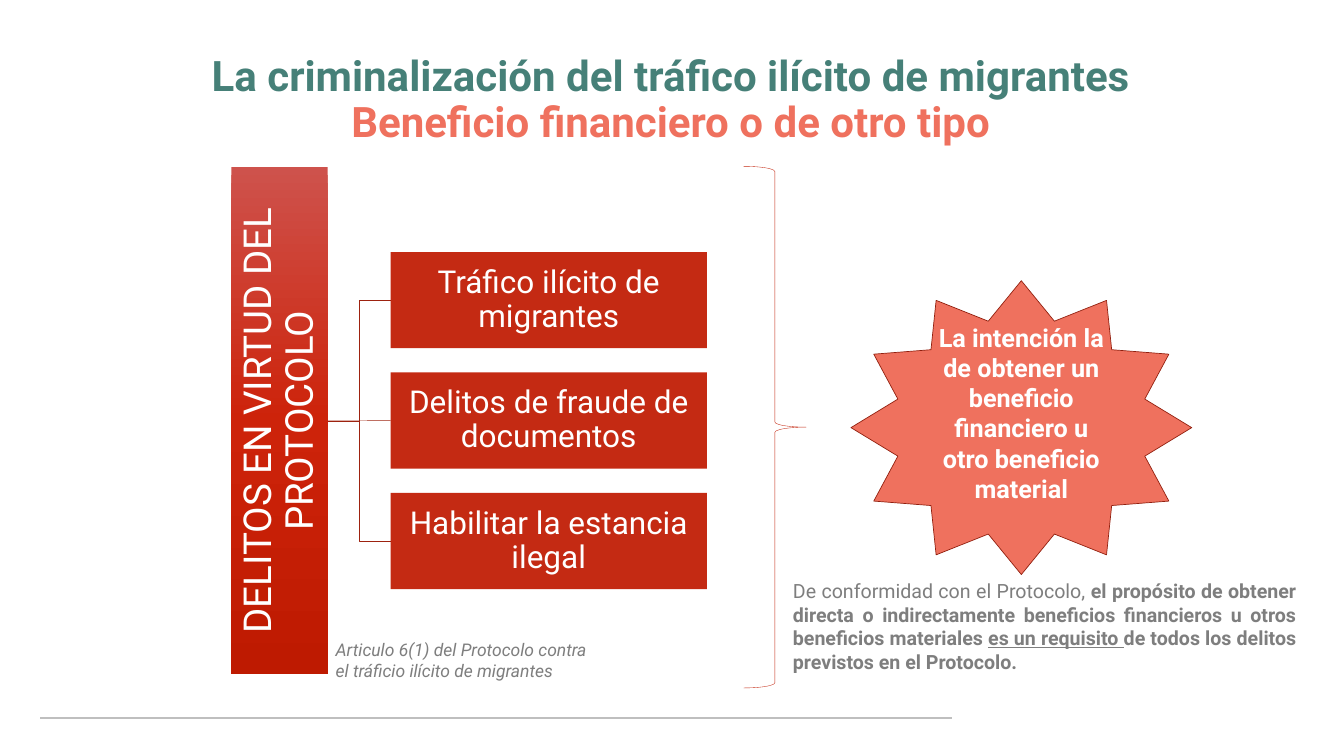
from copy import deepcopy

from lxml import etree
from pptx import Presentation
from pptx.dml.color import RGBColor
from pptx.enum.shapes import MSO_CONNECTOR as Link, MSO_SHAPE as Preset
from pptx.enum.text import MSO_ANCHOR as Anchor, PP_ALIGN as Align
from pptx.oxml.ns import qn
from pptx.util import Inches, Pt

FONT = "Roboto"
WHITE, GREEN, CORAL, GREY = "FFFFFF", "468078", "EF715E", "7E7E7E"
RED, DARK_RED = "C42A13", "9D220F"
OFFENCES = [
    "Tráfico ilícito de migrantes",
    "Delitos de fraude de documentos",
    "Habilitar la estancia ilegal",
]
BOX_LEFT, BOX_TOP, BOX_WIDTH, BOX_HEIGHT, BOX_PITCH = 7.75, 5, 6.27, 1.91, 2.39


def color(hex_string):
    return RGBColor.from_string(hex_string)


def set_frame(shape, inset_x=0.1, inset_y=0.05, anchor=Anchor.MIDDLE):
    frame = shape.text_frame
    frame.word_wrap = True
    frame.vertical_anchor = anchor
    frame.margin_left = frame.margin_right = Inches(inset_x)
    frame.margin_top = frame.margin_bottom = Inches(inset_y)
    return frame


def write(frame, spans, size, align, spacing=1.0):
    """Fill the first paragraph with (text, colour, styles) spans."""
    para = frame.paragraphs[0]
    para.alignment = align
    para.line_spacing = spacing
    for text, hex_string, styles in spans:
        if text == "\v":
            para.add_line_break()
            continue
        span = para.add_run()
        span.text = text
        font = span.font
        font.name, font.size = FONT, Pt(size)
        font.color.rgb = color(hex_string)
        font.bold, font.italic, font.underline = (s in styles for s in "biu")


def add_shape(page, preset, place, fill=None, line=None, line_width=0.5):
    shape = page.shapes.add_shape(preset, *map(Inches, place))
    shape.shadow.inherit = False
    if fill:
        shape.fill.solid()
        shape.fill.fore_color.rgb = color(fill)
    else:
        shape.fill.background()
    if line:
        shape.line.color.rgb = color(line)
        shape.line.width = Pt(line_width)
    else:
        shape.line.fill.background()
    return shape


def add_text(page, place, spans, size, align):
    box = page.shapes.add_textbox(*map(Inches, place))
    write(set_frame(box, anchor=Anchor.TOP), spans, size, align)


def add_line(page, kind, start, end, hex_string, width):
    line = page.shapes.add_connector(kind, *map(Inches, start + end))
    line.line.color.rgb = color(hex_string)
    line.line.width = Pt(width)
    etree.SubElement(line._element.spPr, qn("a:effectLst"))
    return line


def set_gradient(shape, hex_strings):
    """Shade from top to bottom through evenly spaced colours."""
    shape.fill.gradient()
    shape.fill.gradient_angle = 270
    stop_list = shape._element.spPr.find(".//" + qn("a:gsLst"))
    for _ in hex_strings[2:]:
        stop_list.append(deepcopy(stop_list[-1]))
    for index, stop in enumerate(shape.fill.gradient_stops):
        stop.position = index / (len(hex_strings) - 1)
        stop.color.rgb = color(hex_strings[index])


def add_title(page):
    box = page.shapes.add_textbox(*map(Inches, (0.8, 0.55, 25.01, 2.9)))
    spans = [
        ("La criminalización del tráfico ilícito de migrantes", GREEN, "b"),
        ("\v", GREEN, ""),
        ("Beneficio financiero o de otro tipo", CORAL, "b"),
    ]
    write(set_frame(box, 0.2, 0.1), spans, 60, Align.CENTER, 0.9)


def add_bar(page):
    bar = add_shape(page, Preset.RECTANGLE, (4.59, 3.32, 1.91, 10.06))
    set_gradient(bar, ["CE524C", "CD230A", "BE1A01"])
    frame = set_frame(bar, 0.04, 0.04)
    frame._txBody.bodyPr.set("vert", "vert270")
    write(frame, [("DELITOS EN VIRTUD DEL PROTOCOLO", WHITE, "")], 55, Align.CENTER, 0.9)
    return bar


def add_offences(page, bar):
    for row, offence in enumerate(OFFENCES):
        top = BOX_TOP + row * BOX_PITCH
        box = add_shape(page, Preset.RECTANGLE, (BOX_LEFT, top, BOX_WIDTH, BOX_HEIGHT), RED)
        write(set_frame(box, 0.03, 0.03), [(offence, WHITE, "")], 45, Align.CENTER, 0.9)
        kind = Link.STRAIGHT if row == 1 else Link.ELBOW
        link = add_line(page, kind, (6.5, 8.35), (BOX_LEFT, top + BOX_HEIGHT / 2), DARK_RED, 0.5)
        link.begin_connect(bar, 3)
        link.end_connect(box, 1)


def add_star(page):
    star = add_shape(page, Preset.STAR_12_POINT, (16.88, 5.57, 6.76, 5.83), CORAL, "911F0E", 1)
    frame = set_frame(star)
    frame.margin_bottom = Inches(0.64)
    text = "La intención la de obtener un beneficio financiero u otro beneficio material"
    write(frame, [(text, WHITE, "b")], 36, Align.CENTER)


def main():
    deck = Presentation()
    deck.slide_width, deck.slide_height = Inches(26.66), Inches(15)
    page = deck.slides.add_slide(deck.slide_layouts[6])

    add_line(page, Link.STRAIGHT, (0.8, 14.25), (18.88, 14.25), "BFBFBF", 2.25)
    add_title(page)
    add_offences(page, add_bar(page))
    add_shape(page, Preset.RIGHT_BRACE, (14.75, 3.3, 1.24, 10.35), line=RED)
    add_star(page)
    requirement = [
        ("De conformidad con el Protocolo, ", GREY, ""),
        ("el propósito de obtener directa o indirectamente beneficios financieros "
         "u otros beneficios materiales ", GREY, "b"),
        ("es un requisito ", GREY, "bu"),
        ("de todos los delitos previstos en el Protocolo.", GREY, "b"),
    ]
    add_text(page, (15.63, 11.44, 10.18, 2.49), requirement, 28, Align.JUSTIFY)
    source = "Articulo 6(1) del Protocolo contra el tráficio ilícito de migrantes"
    add_text(page, (6.56, 12.62, 5.24, 0.94), [(source, GREY, "i")], 25, Align.LEFT)

    deck.save("out.pptx")


if __name__ == "__main__":
    main()
